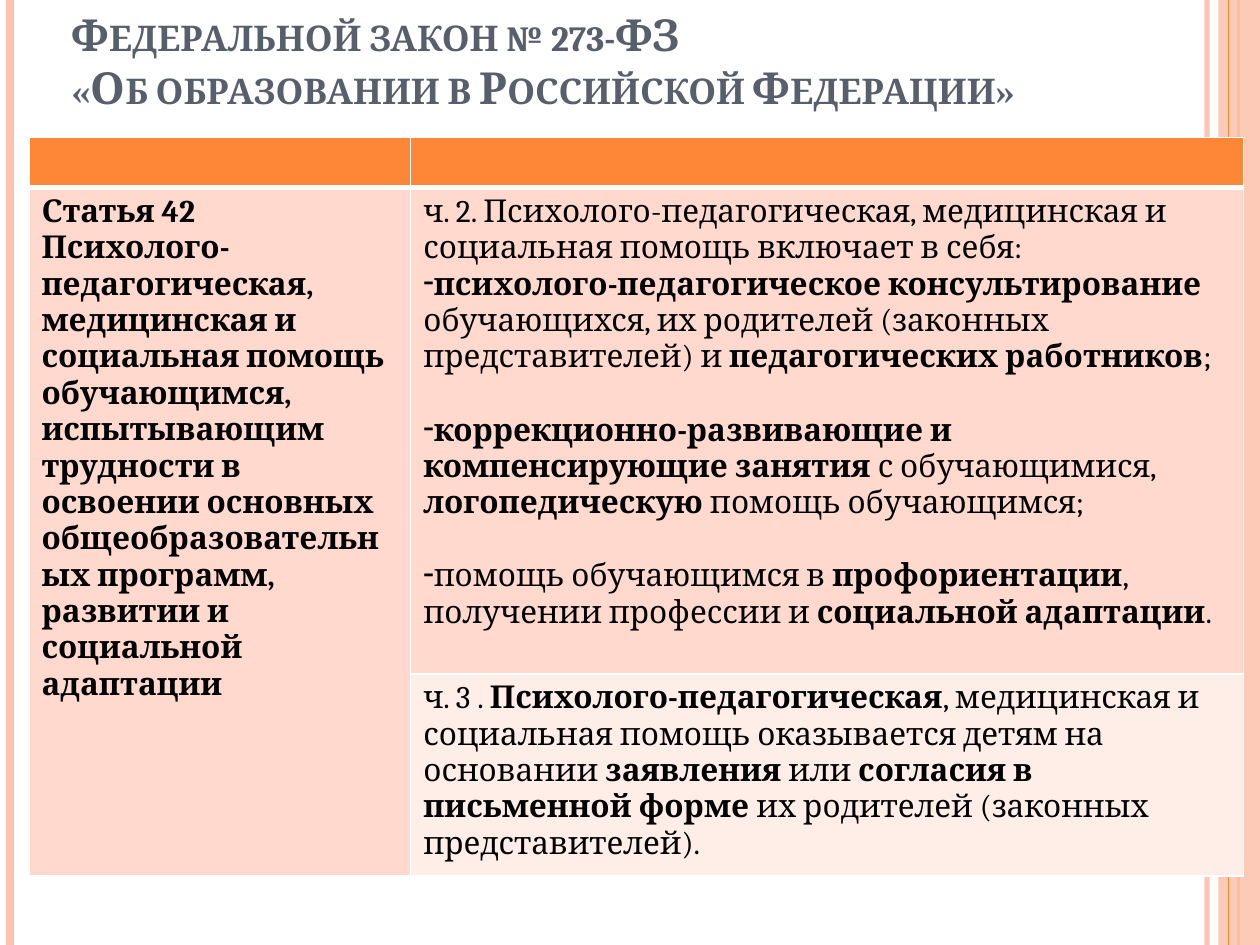
import pptx
import pptx.util
import pptx.dml.color
import pptx.enum.shapes
import pptx.enum.text
import pptx.oxml.ns
from lxml import etree

Inches, Pt = pptx.util.Inches, pptx.util.Pt
RGBColor = pptx.dml.color.RGBColor
qn = pptx.oxml.ns.qn

WHITE = RGBColor(0xFF, 0xFF, 0xFF)
BLACK = RGBColor(0, 0, 0)
SLATE = RGBColor(0x57, 0x5F, 0x6D)
ORANGE = RGBColor(0xFE, 0x86, 0x37)
PEACH = RGBColor(0xFE, 0xC3, 0xAE)
BAND_DARK = RGBColor(0xFF, 0xD9, 0xCE)
BAND_LIGHT = RGBColor(0xFF, 0xED, 0xE8)

SLIDE_HEIGHT = 7.5
FONT = "Cambria"
BODY_SIZE = 18
GAP = 21

TITLE = [
    {"runs": [("Федеральной закон № 273-ФЗ\v«Об образовании в Российской Федерации»", True)]},
]
ARTICLE = [
    {"runs": [("Статья 42", True)]},
    {"runs": [("Психолого-педагогическая, медицинская и социальная помощь обучающимся, "
               "испытывающим трудности в освоении основных общеобразовательных программ, "
               "развитии и социальной адаптации", True)]},
]
PART_2 = [
    {"runs": [("ч. 2. Психолого-педагогическая, медицинская и социальная помощь включает в себя:", False)]},
    {"bullet": "-", "runs": [
        ("психолого-педагогическое консультирование ", True),
        ("обучающихся, их родителей (законных представителей) и ", False),
        ("педагогических работников", True),
        (";", False)]},
    {"bullet": "-", "before": GAP, "runs": [
        ("коррекционно-развивающие и компенсирующие занятия ", True),
        ("с обучающимися, ", False),
        ("логопедическую", True),
        (" помощь обучающимся;", False)]},
    {"bullet": "-", "before": GAP, "runs": [
        ("помощь обучающимся в ", False),
        ("профориентации", True),
        (", получении профессии и ", False),
        ("социальной адаптации", True),
        (".", False)]},
]
PART_3 = [
    {"runs": [
        ("ч. 3 . ", False),
        ("Психолого-педагогическая", True),
        (", медицинская и социальная помощь оказывается детям на основании ", False),
        ("заявления ", True),
        ("или ", False),
        ("согласия в письменной форме ", True),
        ("их родителей (законных представителей).", False)]},
]

ROWS = [
    (0.4, ORANGE, [None, None]),
    (3.86, BAND_DARK, [ARTICLE, PART_2]),
    (1.54, BAND_LIGHT, [None, PART_3]),
]
COLUMN_WIDTHS = [3.03, 6.61]

STRIPES_BEHIND = [(9.58, PEACH, 3, 93), (0.08, PEACH, 4.5, 100), (9.83, ORANGE, 1.5, 100)]
STRIPES_FRONT = [(9.75, ORANGE, 0.75, 100)]


def set_alpha(fill_parent, percent):
    color = next(fill_parent.iter(qn("a:srgbClr")))
    etree.SubElement(color, qn("a:alpha"), val=str(percent * 1000))


def add_stripes(slide, stripes):
    for x, color, width, opacity in stripes:
        stripe = slide.shapes.add_connector(
            pptx.enum.shapes.MSO_CONNECTOR.STRAIGHT,
            Inches(x), Inches(0), Inches(x), Inches(SLIDE_HEIGHT))
        stripe.line.color.rgb = color
        stripe.line.width = Pt(width)
        properties = stripe.element.spPr
        if opacity < 100:
            set_alpha(properties, opacity)
        etree.SubElement(properties, qn("a:effectLst"))


def write_text(frame, paragraphs, size=BODY_SIZE, color=BLACK, small_caps=False):
    frame.word_wrap = True
    for index, content in enumerate(paragraphs):
        paragraph = frame.paragraphs[0] if index == 0 else frame.add_paragraph()
        paragraph.space_before = Pt(content.get("before", 0))
        if "bullet" in content:
            properties = paragraph._p.get_or_add_pPr()
            properties.set("marL", "0")
            properties.set("indent", "0")
            etree.SubElement(properties, qn("a:buChar"), char=content["bullet"])
        for text, bold in content["runs"]:
            for position, line in enumerate(text.split("\v")):
                if position:
                    paragraph.add_line_break()
                run = paragraph.add_run()
                run.text = line
                run.font.name = FONT
                run.font.size = Pt(size)
                run.font.bold = bold
                run.font.color.rgb = color
                if small_caps:
                    run.font._element.set("cap", "small")


def set_borders(cell, **widths):
    properties = cell._tc.get_or_add_tcPr()
    for side in "LRTB":
        border = etree.SubElement(properties, qn("a:ln" + side), w=str(Pt(widths.get(side, 1))))
        fill = etree.SubElement(border, qn("a:solidFill"))
        etree.SubElement(fill, qn("a:srgbClr"), val=str(WHITE))


def add_law_table(slide):
    table = slide.shapes.add_table(
        len(ROWS), len(COLUMN_WIDTHS), Inches(0.23), Inches(1.09),
        Inches(sum(COLUMN_WIDTHS)), Inches(sum(row[0] for row in ROWS))).table
    table.first_row = False
    table.horz_banding = False
    for column, width in zip(table.columns, COLUMN_WIDTHS):
        column.width = Inches(width)
    for row_index, (height, fill, contents) in enumerate(ROWS):
        table.rows[row_index].height = Inches(height)
        for column_index, paragraphs in enumerate(contents):
            cell = table.cell(row_index, column_index)
            set_borders(cell, T=3 if row_index == 1 else 1, B=3 if row_index == 0 else 1)
            cell.fill.solid()
            cell.fill.fore_color.rgb = fill
            if paragraphs:
                write_text(cell.text_frame, paragraphs)
    table.cell(1, 0).merge(table.cell(2, 0))


def main():
    deck = pptx.Presentation()
    deck.slide_width = Inches(10)
    deck.slide_height = Inches(SLIDE_HEIGHT)
    slide = deck.slides.add_slide(deck.slide_layouts[6])

    add_stripes(slide, STRIPES_BEHIND)
    side_band = slide.shapes.add_shape(
        pptx.enum.shapes.MSO_SHAPE.RECTANGLE,
        Inches(9.67), Inches(0), Inches(0.33), Inches(SLIDE_HEIGHT))
    side_band.shadow.inherit = False
    side_band.fill.solid()
    side_band.fill.fore_color.rgb = PEACH
    set_alpha(side_band.element.spPr, 87)
    side_band.line.fill.background()
    add_stripes(slide, STRIPES_FRONT)

    title = slide.shapes.add_textbox(Inches(0.47), Inches(0.16), Inches(8.95), Inches(0.79))
    title.text_frame.vertical_anchor = pptx.enum.text.MSO_ANCHOR.BOTTOM
    write_text(title.text_frame, TITLE, size=25.2, color=SLATE, small_caps=True)

    add_law_table(slide)
    deck.save("out.pptx")


if __name__ == "__main__":
    main()
